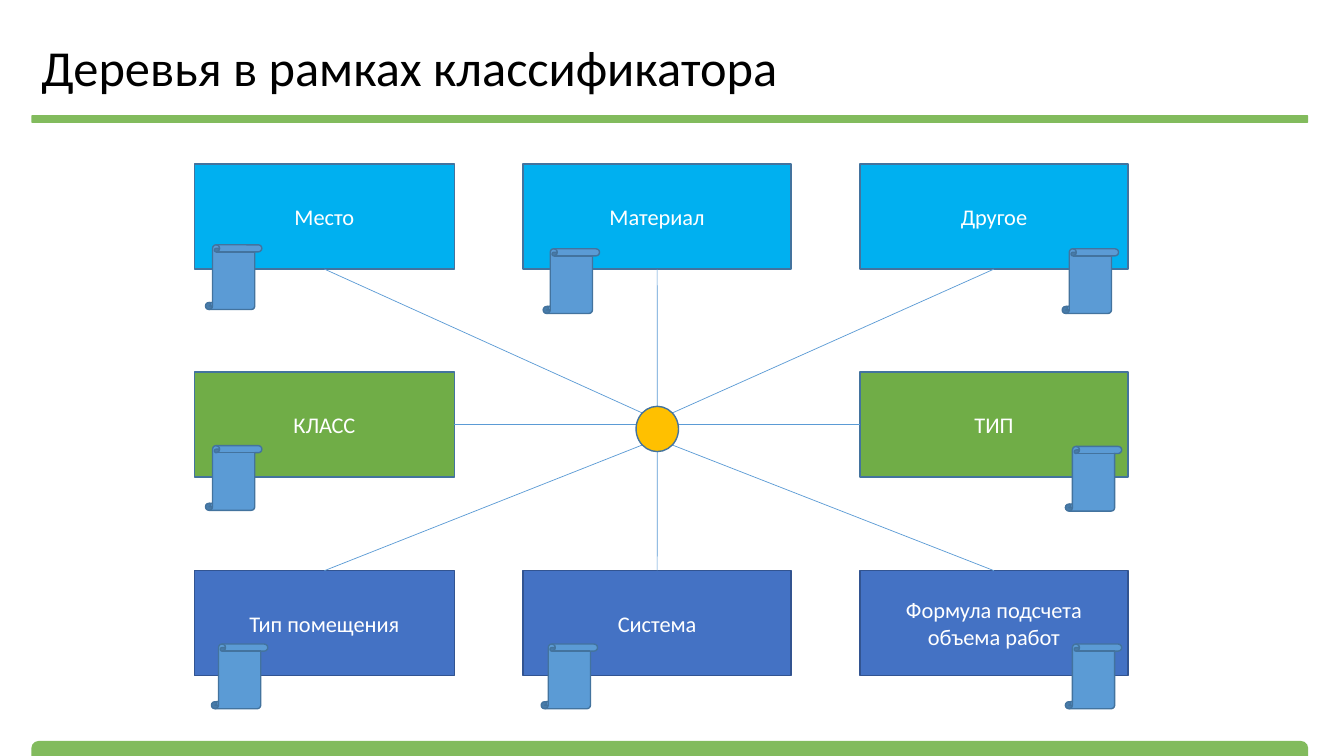
from lxml.etree import SubElement
from pptx import Presentation
from pptx.dml.color import RGBColor
from pptx.enum.shapes import MSO_CONNECTOR, MSO_SHAPE
from pptx.enum.text import MSO_ANCHOR, MSO_AUTO_SIZE, PP_ALIGN
from pptx.oxml.ns import qn
from pptx.util import Cm, Pt

COLORS = {
    "bar": "82BB5D", "title": "000000", "text": "FFFFFF",
    "sky": "00B0F0", "green": "70AD47", "indigo": "4472C4",
    "hub": "FFC000", "scroll": "5B9BD5", "spoke": "5B9BD5",
    "outline": "43739E", "indigo_outline": "325491",
}
FONT = "Calibri"
COLUMNS = [(4.9, 6.55), (13.18, 6.76), (21.67, 6.76)]
ROWS = [
    (4.13, "sky", "outline"),
    (9.37, "green", "outline"),
    (14.38, "indigo", "indigo_outline"),
]
BOX_HEIGHT = 2.65
BOXES = [
    ("Место", 0, 0, 5.18, 6.17),
    ("Материал", 1, 0, 13.69, 6.27),
    ("Другое", 2, 0, 26.77, 6.27),
    ("КЛАСС", 0, 1, 5.18, 11.23),
    ("ТИП", 2, 1, 26.85, 11.25),
    ("Тип помещения", 0, 2, 5.33, 16.23),
    ("Система", 1, 2, 13.64, 16.23),
    ("Формула подсчета объема работ", 2, 2, 26.85, 16.23),
]
HUB = (16.03, 10.24, 1.07, 1.14)
DIAGONAL = 0.146
TOP, LEFT, BOTTOM, RIGHT = range(4)


def rgb(name):
    return RGBColor.from_string(COLORS[name])


def add_block(slide, kind, bounds, fill, outline=None):
    shape = slide.shapes.add_shape(kind, *(Cm(value) for value in bounds))
    shape.shadow.inherit = False
    shape.fill.solid()
    shape.fill.fore_color.rgb = rgb(fill)
    if outline:
        shape.line.color.rgb = rgb(outline)
        shape.line.width = Pt(1)
    else:
        shape.line.fill.background()
    return shape


def add_title(slide, text):
    title = slide.shapes.title
    title.left, title.top, title.width, title.height = Cm(0.79), Cm(0.94), Cm(27.28), Cm(1.68)
    frame = title.text_frame
    frame.text = text
    frame.auto_size = MSO_AUTO_SIZE.NONE
    frame.vertical_anchor = MSO_ANCHOR.MIDDLE
    paragraph = frame.paragraphs[0]
    paragraph.alignment = PP_ALIGN.LEFT
    paragraph.line_spacing = 0.9
    set_font(paragraph, 36, "title")


def set_font(paragraph, size, color):
    paragraph.font.name = FONT
    paragraph.font.size = Pt(size)
    paragraph.font.color.rgb = rgb(color)


def add_box(slide, text, column, row):
    left, width = COLUMNS[column]
    top, fill, outline = ROWS[row]
    shape = add_block(slide, MSO_SHAPE.RECTANGLE, (left, top, width, BOX_HEIGHT), fill, outline)
    frame = shape.text_frame
    frame.word_wrap = True
    frame.vertical_anchor = MSO_ANCHOR.MIDDLE
    frame.text = text
    paragraph = frame.paragraphs[0]
    paragraph.alignment = PP_ALIGN.CENTER
    set_font(paragraph, 16, "text")
    return shape


def add_spoke(slide, box, side, x=0, y=0):
    spoke = slide.shapes.add_connector(MSO_CONNECTOR.STRAIGHT, 0, 0, Cm(x), Cm(y))
    spoke.begin_connect(box, side)
    spoke.line.color.rgb = rgb("spoke")
    spoke.line.width = Pt(0.5)
    SubElement(spoke._element.spPr, qn("a:effectLst"))
    return spoke


def hub_point(column, row):
    left, top, width, height = HUB
    across = (DIAGONAL, 0.5, 1 - DIAGONAL)[column]
    inset = 0 if column == 1 else DIAGONAL
    down = inset if row == 0 else 1 - inset
    return left + width * across, top + height * down


def main():
    """Build the slide of classifier trees around a central hub."""
    presentation = Presentation()
    presentation.slide_width, presentation.slide_height = Cm(33.87), Cm(19.05)
    slide = presentation.slides.add_slide(presentation.slide_layouts[5])

    footer = add_block(slide, MSO_SHAPE.ROUND_2_SAME_RECTANGLE, (0.79, 18.67, 32.18, 0.38), "bar")
    footer.adjustments[0] = 0.5
    add_block(slide, MSO_SHAPE.ROUNDED_RECTANGLE, (0.79, 2.9, 32.18, 0.2), "bar")
    add_title(slide, "Деревья в рамках классификатора")

    boxes = {}
    for text, column, row, scroll_left, scroll_top in BOXES:
        box = boxes[column, row] = add_box(slide, text, column, row)
        add_block(slide, MSO_SHAPE.VERTICAL_SCROLL,
                  (scroll_left, scroll_top, 1.42, 1.63), "scroll", "outline")
        if row != 1:
            side = BOTTOM if row == 0 else TOP
            add_spoke(slide, box, side, *hub_point(column, row))
    add_spoke(slide, boxes[0, 1], RIGHT).end_connect(boxes[2, 1], LEFT)
    add_block(slide, MSO_SHAPE.OVAL, HUB, "hub", "outline")

    presentation.save("out.pptx")


if __name__ == "__main__":
    main()
